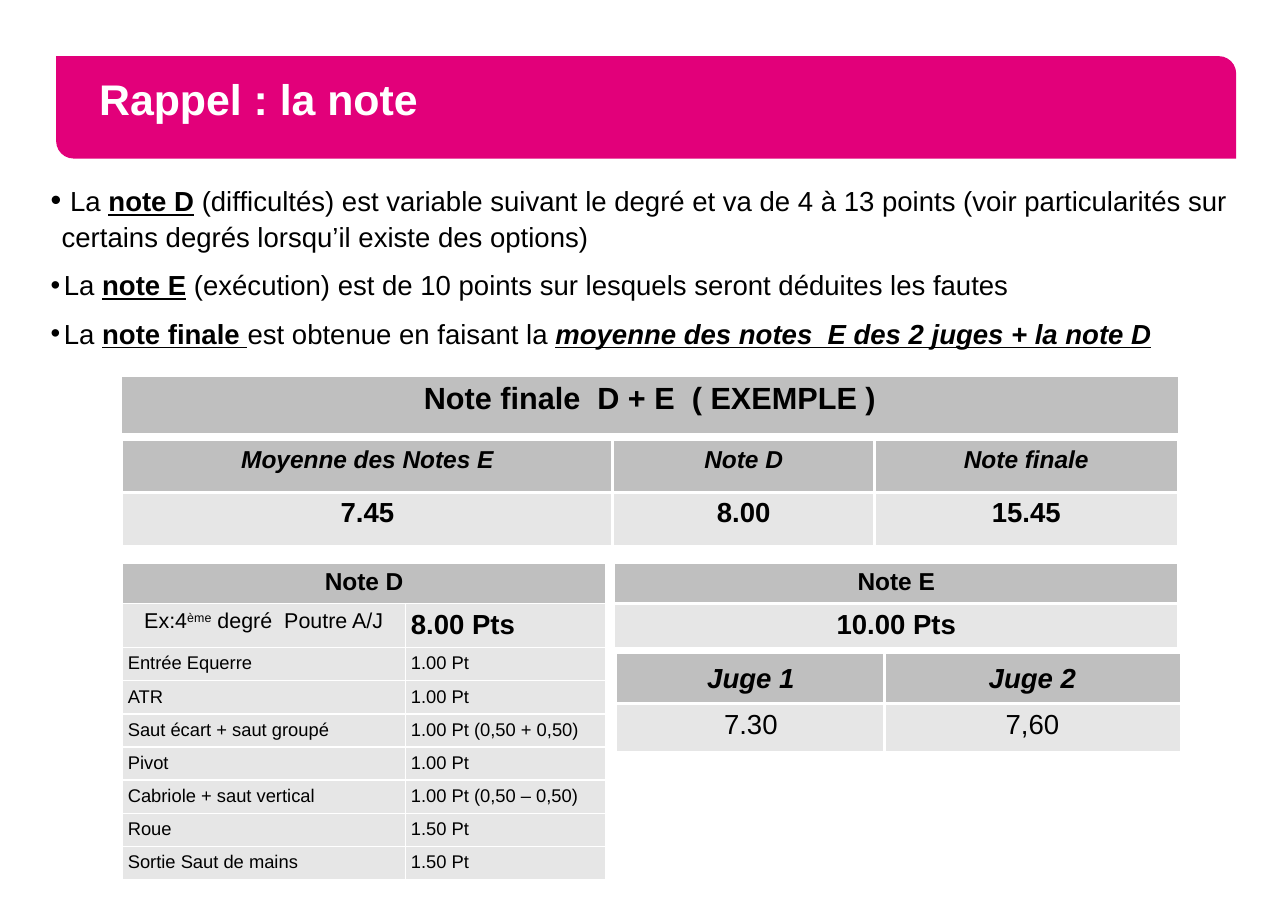
from lxml import etree
from pptx import Presentation
from pptx.dml.color import RGBColor
from pptx.enum.shapes import MSO_SHAPE as Shape
from pptx.enum.text import MSO_ANCHOR as Anchor, PP_ALIGN as Align
from pptx.oxml.ns import qn
from pptx.util import Inches, Pt

COLORS = {"pink": "E2007A", "white": "FFFFFF", "black": "000000",
          "head": "BFBFBF", "body": "E6E6E6"}
FONT = "Arial"
LEFT = 1.11
WIDTH = 9.58


def color(name):
    return RGBColor.from_string(COLORS[name])


def add_span(para, text, size, style="", shade="black"):
    """Add a run; style holds any of the letters b, i, u, ^ (superscript)."""
    span = para.add_run()
    span.text = text
    font = span.font
    font.name, font.size = FONT, Pt(size)
    font.bold, font.italic, font.underline = (letter in style for letter in "biu")
    font.color.rgb = color(shade)
    if "^" in style:
        span._r.get_or_add_rPr().set("baseline", "30000")


def add_box(page, left, top, width, height, inset=(0, 0)):
    box = page.shapes.add_textbox(Inches(left), Inches(top), Inches(width), Inches(height))
    frame = box.text_frame
    frame.word_wrap = True
    frame.margin_left = frame.margin_right = Inches(inset[0])
    frame.margin_top = frame.margin_bottom = Inches(inset[1])
    return frame


def add_banner(page, title):
    place = (0.51, 0.51, 10.71, 0.93)
    banner = page.shapes.add_shape(Shape.ROUND_2_DIAG_RECTANGLE, *map(Inches, place))
    banner.shadow.inherit = False
    banner.adjustments[0], banner.adjustments[1] = 0, 0.17
    banner.fill.solid()
    banner.fill.fore_color.rgb = color("pink")
    banner.line.fill.background()
    frame = add_box(page, *place, inset=(0.39, 0.05))
    frame.vertical_anchor = Anchor.MIDDLE
    para = frame.paragraphs[0]
    para.line_spacing = Pt(22)
    add_span(para, title, 28, "b", "white")


def add_bullets(page, items):
    frame = add_box(page, 0.26, 1.63, 11.21, 1.66)
    for index, (margin, hanging, spans) in enumerate(items):
        para = frame.add_paragraph() if index else frame.paragraphs[0]
        props = para._p.get_or_add_pPr()
        props.set("marL", str(Inches(margin)))
        props.set("indent", str(-Inches(hanging)))
        etree.SubElement(props, qn("a:buFont"), typeface=FONT)
        etree.SubElement(props, qn("a:buChar"), char="•")
        para.line_spacing = 1.05
        para.space_before = Pt(9 if index else 0)
        for span in spans:
            add_span(para, *span)


def set_borders(cell, widths):
    """Give the cell white borders; widths are left, right, top, bottom in points."""
    props = cell._tc.get_or_add_tcPr()
    for index, (side, width) in enumerate(zip("LRTB", widths)):
        line = etree.Element(qn(f"a:ln{side}"), w=str(Pt(width)))
        if width:
            fill = etree.SubElement(line, qn("a:solidFill"))
            etree.SubElement(fill, qn("a:srgbClr"), val=COLORS["white"])
        else:
            etree.SubElement(line, qn("a:noFill"))
        props.insert(index, line)


def add_grid(page, left, top, columns, heights, rows, inner=2.25, outer=1):
    """Add a table; each row is a list of cells, each cell (align, spans)."""
    frame = page.shapes.add_table(len(rows), len(columns), Inches(left), Inches(top),
                                  Inches(sum(columns)), Inches(sum(heights)))
    table = frame.table
    table.first_row = table.horz_banding = False
    for column, width in zip(table.columns, columns):
        column.width = Inches(width)
    last_row, last_column = len(rows) - 1, len(columns) - 1
    for r, (row, height) in enumerate(zip(rows, heights)):
        table.rows[r].height = Inches(height)
        for c in range(len(columns)):
            cell = table.cell(r, c)
            cell.margin_left = cell.margin_right = Inches(0.05)
            cell.margin_top = cell.margin_bottom = Inches(0.05)
            cell.fill.solid()
            cell.fill.fore_color.rgb = color("body" if r else "head")
            edges = (c == 0, c == last_column, r == 0, r == last_row)
            set_borders(cell, [outer if edge else inner for edge in edges])
            if c < len(row):
                para = cell.text_frame.paragraphs[0]
                para.alignment, spans = row[c]
                for span in spans:
                    add_span(para, *span)
        if len(row) < len(columns):
            table.cell(r, 0).merge(table.cell(r, last_column))
    return table


def plain_row(texts, size, style="", align=Align.CENTER):
    return [(align, [(text, size, style)]) for text in texts]


def main():
    deck = Presentation()
    deck.slide_width, deck.slide_height = Inches(11.69), Inches(8.27)
    page = deck.slides.add_slide(deck.slide_layouts[6])

    # Title and reminders
    add_banner(page, "Rappel : la note")
    add_bullets(page, [
        (0.3, 0.1, [
            (" ", 20), ("La ", 18), ("note D", 18, "bu"),
            (" (difficultés) est variable suivant le degré et va de 4 à 13 points "
             "(voir particularités sur certains degrés lorsqu’il existe des options)", 18)]),
        (0.32, 0.12, [
            ("La ", 18), ("note E", 18, "bu"),
            (" (exécution) est de 10 points sur lesquels seront déduites les fautes", 18)]),
        (0.32, 0.12, [
            ("La ", 18), ("note finale ", 18, "bu"), ("est obtenue en faisant la ", 18),
            ("moyenne des notes  E des 2 juges + la note D", 18, "biu")]),
    ])

    # Final mark
    add_grid(page, LEFT, 3.42, [WIDTH], [0.51],
             [plain_row(["Note finale  D + E  ( EXEMPLE )"], 20, "b")], outer=0)
    add_grid(page, LEFT, 4, [4.45, 2.38, 2.75], [0.47, 0.48], [
        plain_row(["Moyenne des Notes E", "Note D", "Note finale"], 16, "bi"),
        plain_row(["7.45", "8.00", "15.45"], 18, "b")])

    # Difficulty mark
    elements = [
        ("Entrée Equerre", "1.00 Pt"),
        ("ATR", "1.00 Pt"),
        ("Saut écart + saut groupé", "1.00 Pt (0,50 + 0,50)"),
        ("Pivot", "1.00 Pt"),
        ("Cabriole + saut vertical", "1.00 Pt (0,50 – 0,50)"),
        ("Roue", "1.50 Pt"),
        ("Sortie Saut de mains", "1.50 Pt"),
    ]
    example = [
        (Align.CENTER, [("Ex:4", 14), ("ème", 14, "^"), (" degré  Poutre A/J", 14)]),
        (Align.LEFT, [("8.00 Pts", 18, "b")])]
    add_grid(page, LEFT, 5.11, [2.57, 1.82], [0.37, 0.4] + [0.3] * len(elements),
             [plain_row(["Note D"], 16, "b"), example]
             + [plain_row(texts, 12, align=Align.LEFT) for texts in elements], inner=1)

    # Execution mark and judges
    add_grid(page, 5.58, 5.11, [5.11], [0.37, 0.4], [
        plain_row(["Note E"], 16, "b"), plain_row(["10.00 Pts"], 18, "b")])
    judges = add_grid(page, 5.6, 5.94, [2.43, 2.68], [0.45, 0.43], [
        plain_row(["Juge 1", "Juge 2"], 18, "bi"), plain_row(["7.30", "7,60"], 18)], outer=0)
    for cell in judges.rows[0].cells:
        cell.vertical_anchor = Anchor.MIDDLE

    deck.save("out.pptx")


if __name__ == "__main__":
    main()
